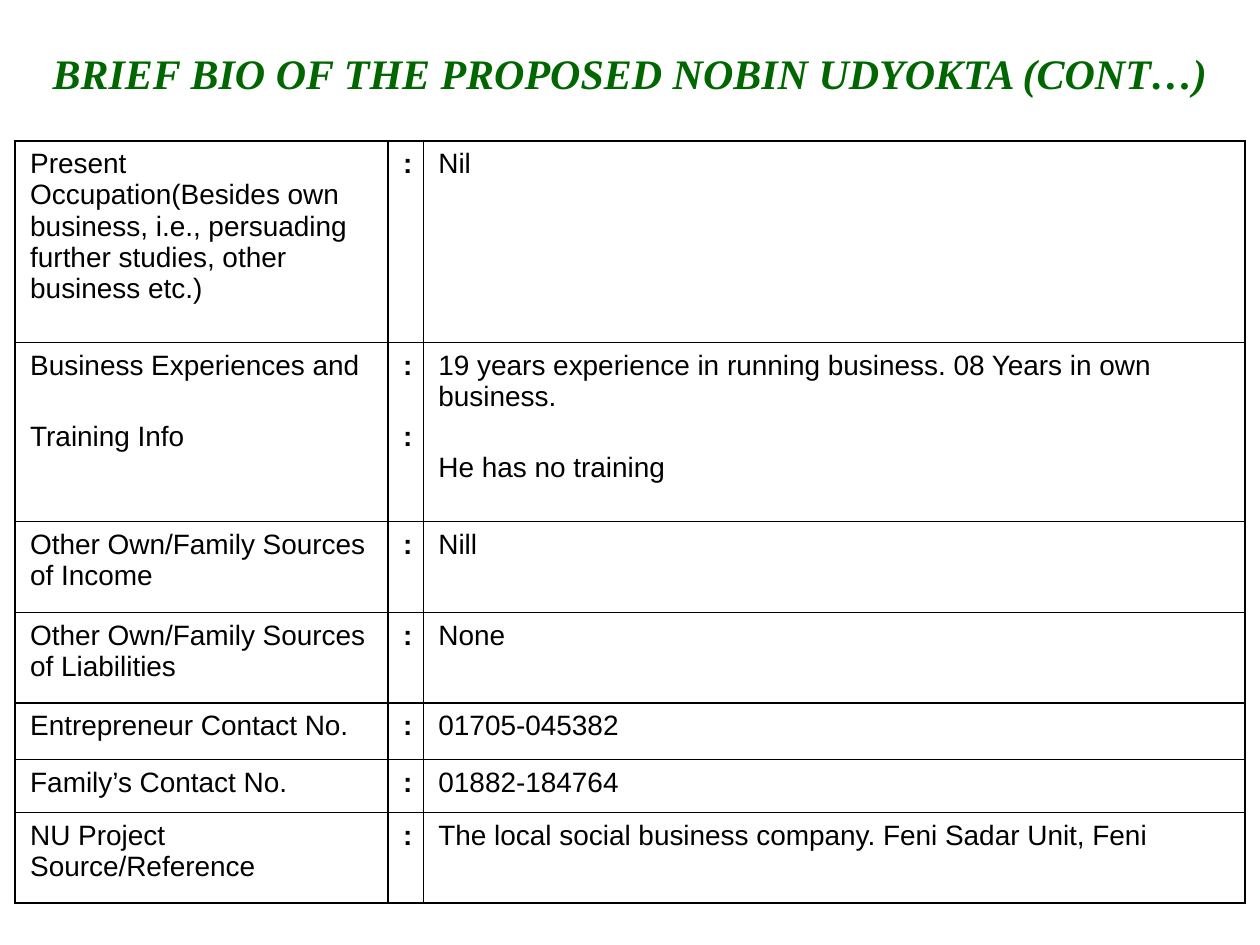
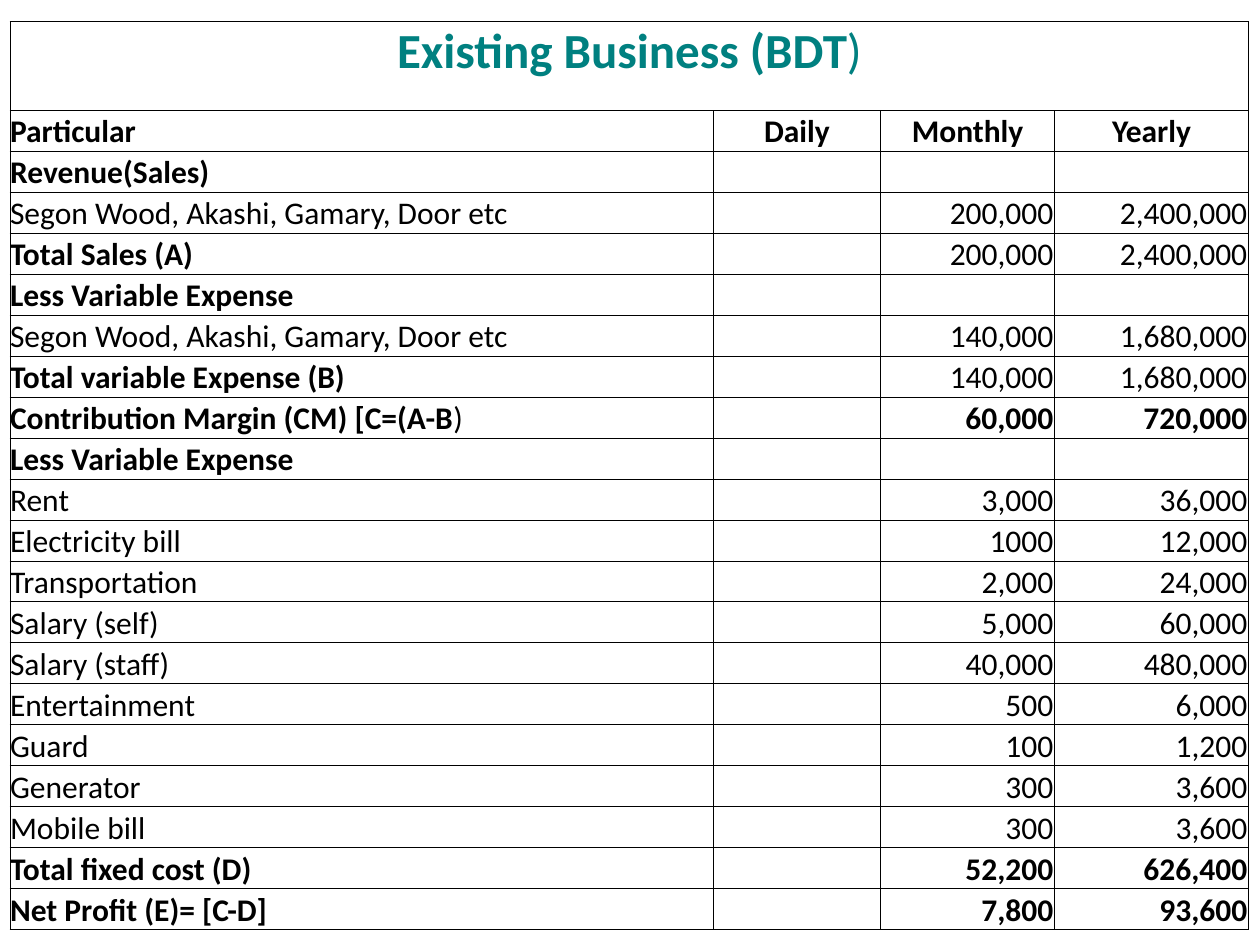
from lxml.etree import SubElement
from pptx import Presentation
from pptx.dml.color import RGBColor
from pptx.enum.text import MSO_ANCHOR as Anchor, PP_ALIGN as Align
from pptx.oxml.ns import qn
from pptx.util import Inches, Pt

BLACK, WHITE, GREEN, TEAL = "000000", "FFFFFF", "006600", "008080"

BIO_ROWS = [
    (1.6, "Present Occupation(Besides own business, i.e., persuading "
          "further studies, other business etc.)", ":", "Nil"),
    (1.42, "Business Experiences and\nTraining Info", ":\n:",
     "19 years experience in running business. 08 Years in own business.\n"
     "He has no training"),
    (0.72, "Other Own/Family Sources of Income", ":", "Nill"),
    (0.72, "Other Own/Family Sources of Liabilities", ":", "None"),
    (0.45, "Entrepreneur Contact No.", ":", "01705-045382"),
    (0.42, "Family’s Contact No.", ":", "01882-184764"),
    (0.72, "NU Project Source/Reference", ":",
     "The local social business company. Feni Sadar Unit, Feni"),
]

# How a row is set: (bold label, bold amounts)
ITEM, SUBTOTAL, RESULT = (False, False), (True, False), (True, True)
WOOD = "Segon Wood, Akashi, Gamary, Door etc"
BUSINESS_ROWS = [
    (SUBTOTAL, "Revenue(Sales)", "", ""),
    (ITEM, WOOD, "200,000", "2,400,000"),
    (SUBTOTAL, "Total Sales (A)", "200,000", "2,400,000"),
    (SUBTOTAL, "Less Variable Expense", "", ""),
    (ITEM, WOOD, "140,000", "1,680,000"),
    (SUBTOTAL, "Total variable Expense (B)", "140,000", "1,680,000"),
    (RESULT, "Contribution Margin (CM) [C=(A-B)", "60,000", "720,000"),
    (SUBTOTAL, "Less Variable Expense", "", ""),
    (ITEM, "Rent", "3,000", "36,000"),
    (ITEM, "Electricity bill", "1000", "12,000"),
    (ITEM, "Transportation", "2,000", "24,000"),
    (ITEM, "Salary (self)", "5,000", "60,000"),
    (ITEM, "Salary (staff)", "40,000", "480,000"),
    (ITEM, "Entertainment", "500", "6,000"),
    (ITEM, "Guard", "100", "1,200"),
    (ITEM, "Generator", "300", "3,600"),
    (ITEM, "Mobile bill", "300", "3,600"),
    (RESULT, "Total fixed cost (D)", "52,200", "626,400"),
    (RESULT, "Net Profit (E)= [C-D]", "7,800", "93,600"),
]


def rgb(color):
    return RGBColor.from_string(color)


def write(frame, text, font="Calibri", size=18, color=BLACK, bold=False,
          italic=False, align=Align.LEFT, gap=0, plain_end=0):
    """Fill a frame, one paragraph a line; the last plain_end letters are not bold."""
    for number, line in enumerate(text.split("\n")):
        para = frame.add_paragraph() if number else frame.paragraphs[0]
        para.alignment = align
        if number:
            para.space_before = Pt(gap)
        cut = len(line) - plain_end
        for piece, heavy in ((line[:cut], bold), (line[cut:], False)):
            if piece:
                span = para.add_run()
                span.text = piece
                span.font.name, span.font.size = font, Pt(size)
                span.font.bold, span.font.italic = heavy, italic
                span.font.color.rgb = rgb(color)


def set_borders(cell, width):
    props = cell._tc.get_or_add_tcPr()
    for side in ("a:lnL", "a:lnR", "a:lnT", "a:lnB"):
        line = SubElement(props, qn(side), w=str(Pt(width)))
        fill = SubElement(line, qn("a:solidFill"))
        SubElement(fill, qn("a:srgbClr"), val=BLACK)


def add_grid(page, left, top, widths, heights, border, inset, anchor):
    """Add a plain white table whose cells share border, insets and anchor."""
    table = page.shapes.add_table(
        len(heights), len(widths), Inches(left), Inches(top),
        Inches(sum(widths)), Inches(sum(heights))).table
    table.first_row = table.horz_banding = False
    for column, width in zip(table.columns, widths):
        column.width = Inches(width)
    for row, height in zip(table.rows, heights):
        row.height = Inches(height)
    side, edge = (Inches(value) for value in inset)
    for cell in table.iter_cells():
        set_borders(cell, border)
        cell.fill.solid()
        cell.fill.fore_color.rgb = rgb(WHITE)
        cell.margin_left = cell.margin_right = side
        cell.margin_top = cell.margin_bottom = edge
        cell.vertical_anchor = anchor
    return table


def add_title(page, text, left, top, width, height):
    frame = page.shapes.add_textbox(
        Inches(left), Inches(top), Inches(width), Inches(height)).text_frame
    frame.word_wrap = True
    frame.vertical_anchor = Anchor.MIDDLE
    frame.margin_top, frame.margin_bottom = Inches(0.38), 0
    write(frame, text, font="Times New Roman", size=24, color=GREEN,
          bold=True, italic=True, align=Align.CENTER)


def add_bio_table(page, left, top):
    table = add_grid(page, left, top, (2.96, 0.28, 6.52),
                     [row[0] for row in BIO_ROWS],
                     border=1, inset=(0.12, 0.06), anchor=Anchor.TOP)
    for row, (_, *texts) in enumerate(BIO_ROWS):
        for column, text in enumerate(texts):
            write(table.cell(row, column).text_frame, text, font="Arial",
                  size=16, bold=column == 1, gap=23)


def add_business_table(page, left, top, height):
    title_height, header_height = 0.71, 0.32
    row_height = (height - title_height - header_height) / len(BUSINESS_ROWS)
    heights = [title_height, header_height] + [row_height] * len(BUSINESS_ROWS)
    table = add_grid(page, left, top, (5.58, 1.33, 1.38, 1.54), heights,
                     border=0.5, inset=(0, 0), anchor=Anchor.BOTTOM)

    title = table.cell(0, 0)
    title.merge(table.cell(0, 3))
    title.vertical_anchor = Anchor.TOP
    write(title.text_frame, "Existing Business (BDT)", size=28, color=TEAL,
          bold=True, align=Align.CENTER, plain_end=1)

    for column, text in enumerate(("Particular", "Daily", "Monthly", "Yearly")):
        write(table.cell(1, column).text_frame, text, bold=True,
              align=Align.CENTER if column else Align.LEFT)

    for row, (style, label, *amounts) in enumerate(BUSINESS_ROWS, start=2):
        bold_label, bold_amounts = style
        write(table.cell(row, 0).text_frame, label, bold=bold_label,
              plain_end=1 if label.endswith("A-B)") else 0)
        for column, amount in enumerate(amounts, start=2):
            cell = table.cell(row, column)
            cell.margin_left = cell.margin_right = cell.margin_top = Inches(0.01)
            write(cell.text_frame, amount, bold=bold_amounts, align=Align.RIGHT)


def main():
    deck = Presentation()
    deck.slide_width, deck.slide_height = Inches(10), Inches(7.5)
    blank = deck.slide_layouts[6]

    bio = deck.slides.add_slide(blank)
    add_bio_table(bio, 0.12, 1.12)
    add_title(bio, "BRIEF BIO OF THE PROPOSED NOBIN UDYOKTA (CONT…)",
              0, 0.02, 10, 0.73)

    business = deck.slides.add_slide(blank)
    add_business_table(business, 0.08, 0.17, 7.21)

    deck.save("out.pptx")


if __name__ == "__main__":
    main()
